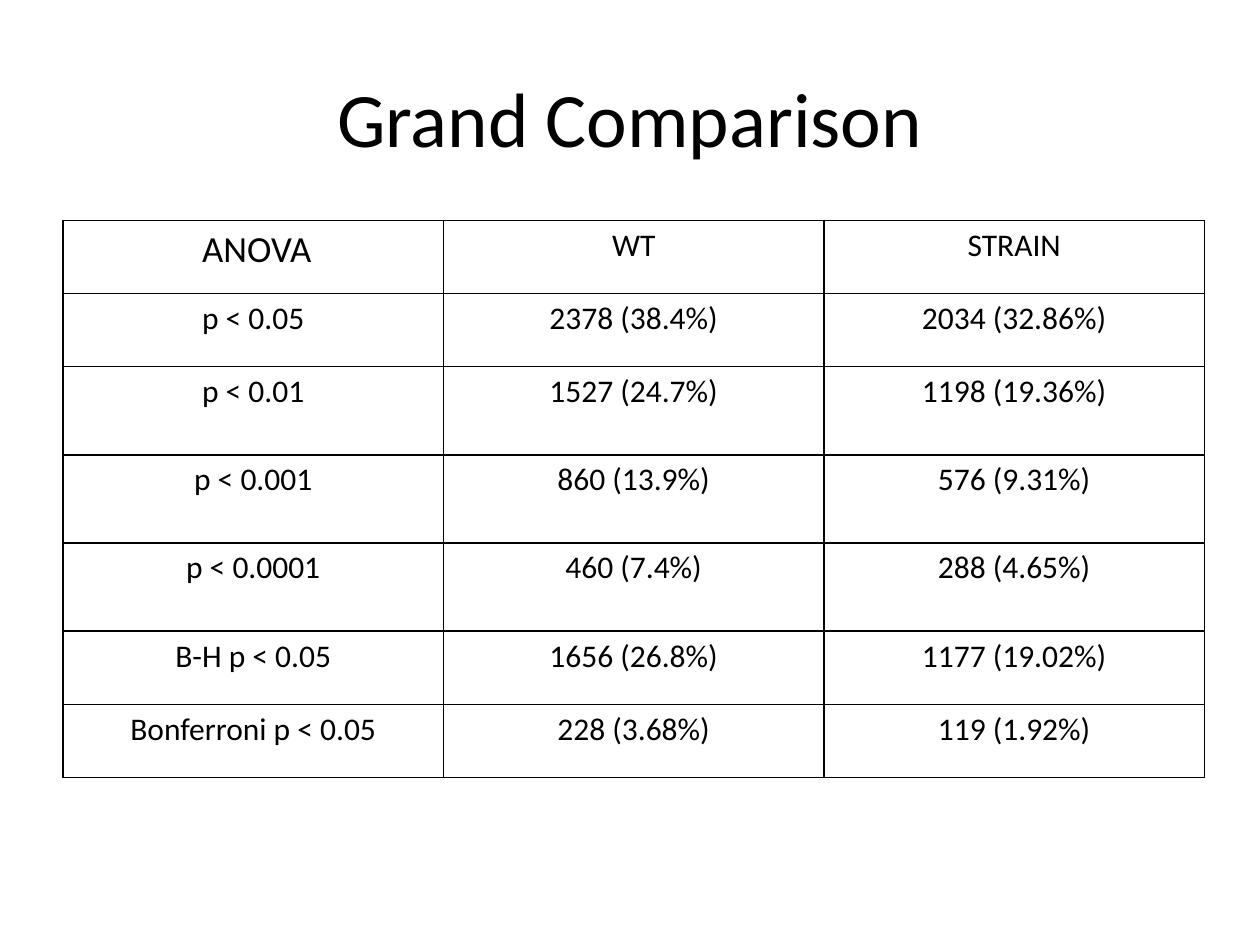
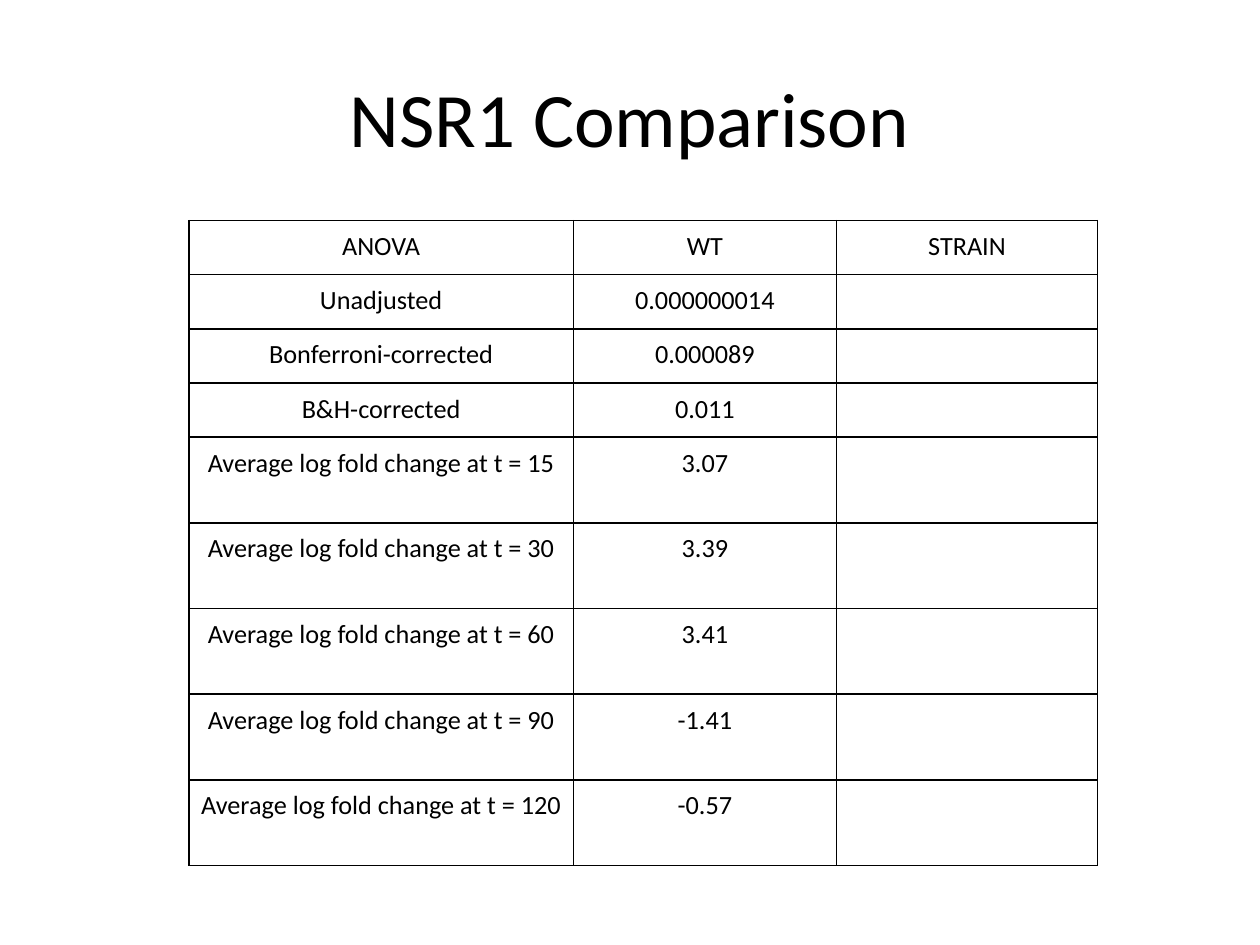
from pptx import Presentation
from pptx.dml.color import RGBColor
from pptx.enum.text import MSO_ANCHOR as Anchor, PP_ALIGN as Align
from pptx.oxml import parse_xml
from pptx.oxml.ns import nsdecls
from pptx.util import Inches, Pt

BLACK = RGBColor(0, 0, 0)
FONT = "Calibri"

GRAND_ROWS = [
    [[(" ", 18), ("ANOVA", 21)], "WT", "STRAIN"],
    ["p < 0.05", "2378 (38.4%)", "2034 (32.86%)"],
    ["p < 0.01", "1527 (24.7%)", "1198 (19.36%)"],
    ["p < 0.001", "860 (13.9%)", "576 (9.31%)"],
    ["p < 0.0001", "460 (7.4%)", "288 (4.65%)"],
    ["B-H p < 0.05", "1656 (26.8%)", "1177 (19.02%)"],
    ["Bonferroni p < 0.05", "228 (3.68%)", "119 (1.92%)"],
]
FOLD_CHANGES = {15: "3.07", 30: "3.39", 60: "3.41", 90: "-1.41", 120: "-0.57"}
NSR1_ROWS = [
    ["ANOVA", "WT", "STRAIN"],
    ["Unadjusted", "0.000000014", ""],
    ["Bonferroni-corrected", "0.000089", ""],
    ["B&H-corrected", "0.011", ""],
] + [[f"Average log fold change at t = {t}", v, ""] for t, v in FOLD_CHANGES.items()]


class Deck:
    """Hold the shared style and the current slide."""

    def __init__(self):
        self.prs = Presentation()
        self.prs.slide_width, self.prs.slide_height = Inches(10), Inches(7.5)

    def slide(self, title):
        self.s = self.prs.slides.add_slide(self.prs.slide_layouts[6])
        tf = self.s.shapes.add_textbox(Inches(0.5), Inches(0.3), Inches(9), Inches(1.25)).text_frame
        tf.word_wrap = True
        tf.vertical_anchor = Anchor.MIDDLE
        self.add_runs(tf.paragraphs[0], [(title, 44)])

    def add_runs(self, p, runs):
        p.alignment = Align.CENTER
        for text, size in runs:
            r = p.add_run()
            r.text = text
            r.font.name, r.font.size = FONT, Pt(size)
            r.font.color.rgb = BLACK

    def border(self, cell):
        tc_pr = cell._tc.get_or_add_tcPr()
        for i, side in enumerate("LRTB"):
            tc_pr.insert(i, parse_xml(
                f'<a:ln{side} {nsdecls("a")} w="{Pt(1)}"><a:solidFill>'
                f'<a:srgbClr val="{BLACK}"/></a:solidFill></a:ln{side}>'))

    def table(self, left, rows, widths, heights, size, pad_x, pad_y, spacing):
        table = self.s.shapes.add_table(
            len(rows), len(widths), Inches(left), Inches(1.75),
            Inches(sum(widths)), Inches(sum(heights))).table
        table.first_row = table.horz_banding = False
        for col, width in zip(table.columns, widths):
            col.width = Inches(width)
        for row, height, values in zip(table.rows, heights, rows):
            row.height = Inches(height)
            for cell, value in zip(row.cells, values):
                cell.fill.background()
                self.border(cell)
                if not value:
                    continue
                cell.margin_left = cell.margin_right = Inches(pad_x)
                cell.margin_top = cell.margin_bottom = Inches(pad_y)
                p = cell.text_frame.paragraphs[0]
                p.line_spacing = spacing
                self.add_runs(p, [(value, size)] if isinstance(value, str) else value)


def main():
    deck = Deck()
    deck.slide("Grand Comparison")
    deck.table(0.5, GRAND_ROWS, [3.02] * 3, [0.58] * 2 + [0.7] * 3 + [0.58] * 2,
               18, 0.07, 0, 1.15)
    deck.slide("NSR1 Comparison")
    deck.table(1.5, NSR1_ROWS, [3.05, 2.09, 2.07], [0.43] * 4 + [0.68] * 5,
               15, 0.08, 0.08, 1.0)
    deck.prs.save("out.pptx")


if __name__ == "__main__":
    main()
